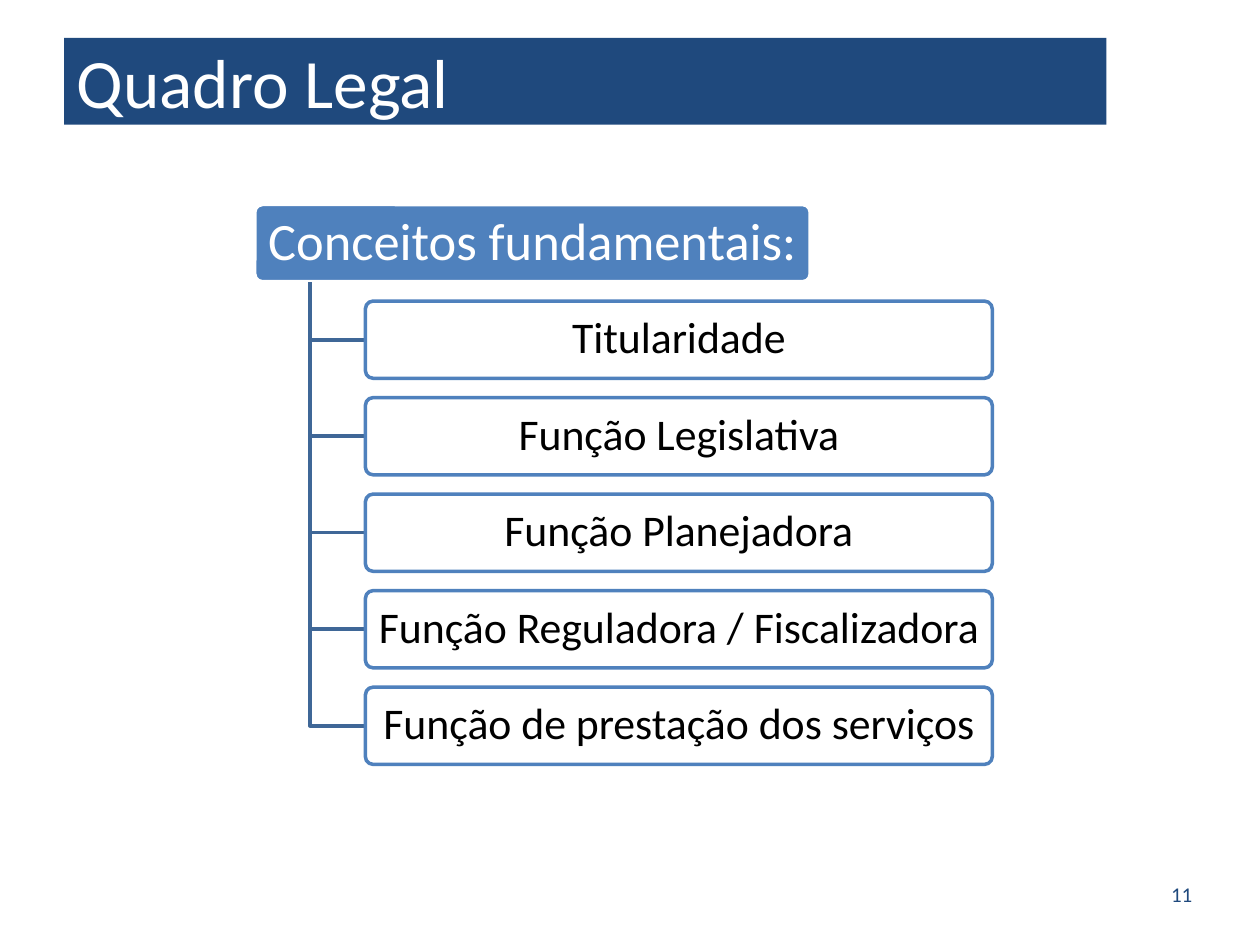
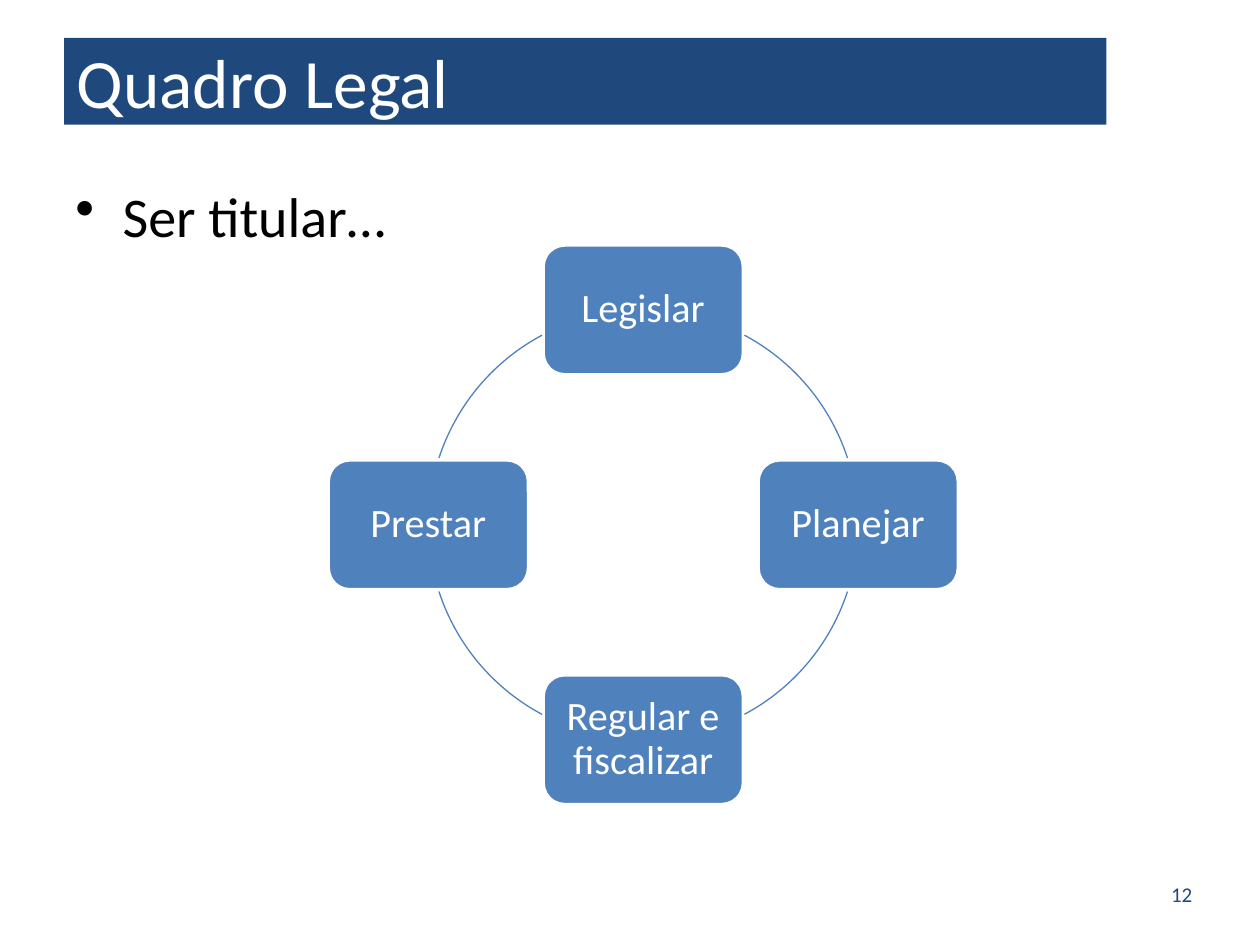
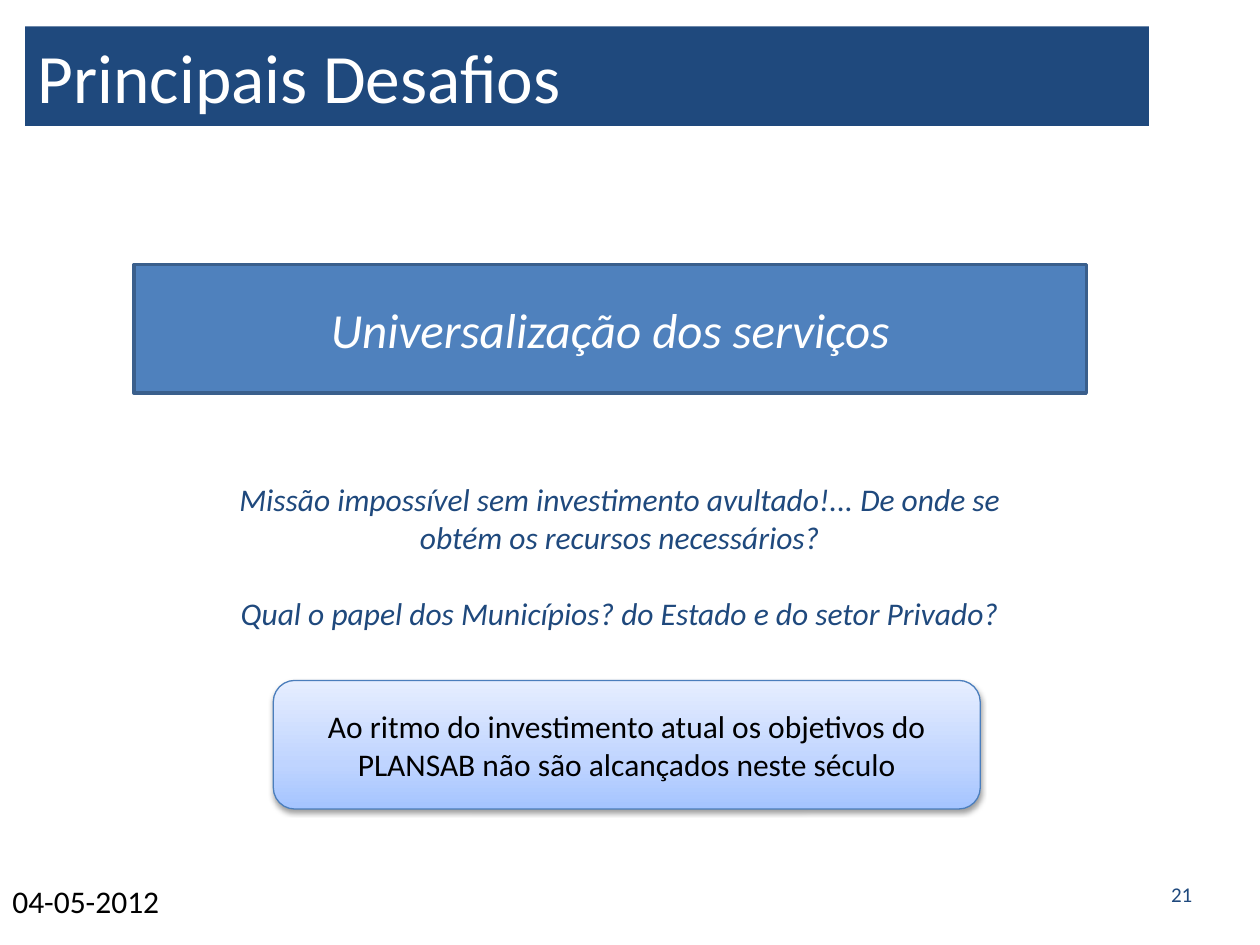
import copy

import lxml.etree
import pptx
import pptx.dml.color
import pptx.enum.shapes
import pptx.enum.text
import pptx.oxml.ns
import pptx.util

Pt = pptx.util.Pt
RGB = pptx.dml.color.RGBColor
ALIGN = pptx.enum.text.PP_ALIGN
ANCHOR = pptx.enum.text.MSO_ANCHOR
SHAPE = pptx.enum.shapes.MSO_SHAPE
qn = pptx.oxml.ns.qn

NAVY = RGB(0x1F, 0x49, 0x7D)
BLUE = RGB(0x4F, 0x81, 0xBD)
BRANCH_BLUE = RGB(0x3F, 0x67, 0x97)
FRAME_BLUE = RGB(0x3A, 0x5F, 0x8C)
EDGE_BLUE = RGB(0x4B, 0x7E, 0xBC)
WHITE = RGB(0xFF, 0xFF, 0xFF)
BLACK = RGB(0, 0, 0)
GRADIENT = (
    (0, RGB(0xA4, 0xC4, 0xFF)),
    (0.35, RGB(0xBF, 0xD4, 0xFF)),
    (1, RGB(0xE6, 0xEE, 0xFF)),
)

FONT = "Calibri"
LEGAL_BAND = (36.7, 21.6, 595.5, 49.7)
CHALLENGE_BAND = (14.4, 15.1, 642.2, 56.9)


def points(*lengths):
    """Convert numbers in points to lengths."""
    return [Pt(length) for length in lengths]


def write_text(frame, text, size=18, color=BLACK, italic=False, align=ALIGN.LEFT,
               anchor=ANCHOR.MIDDLE, insets=(7.2, 3.6), line_spacing=None, gap=0):
    """Fill a text frame, one paragraph per line of text."""
    frame.word_wrap = True
    frame.auto_size = pptx.enum.text.MSO_AUTO_SIZE.NONE
    frame.vertical_anchor = anchor
    frame.margin_left = frame.margin_right = Pt(insets[0])
    frame.margin_top = frame.margin_bottom = Pt(insets[1])
    for index, line in enumerate(text.split("\n")):
        paragraph = frame.add_paragraph() if index else frame.paragraphs[0]
        paragraph.alignment = align
        paragraph.line_spacing = line_spacing
        if index:
            paragraph.space_before = Pt(gap)
        run = paragraph.add_run()
        run.text = line
        run.font.name = FONT
        run.font.size = Pt(size)
        run.font.italic = italic
        run.font.color.rgb = color


def add_label(slide, box, text, **text_format):
    """Add free-standing text."""
    label = slide.shapes.add_textbox(*points(*box))
    write_text(label.text_frame, text, **text_format)
    return label


def add_block(slide, kind, box, fill, line, text, line_width=2, corner=None, **text_format):
    """Add a filled shape with centred text."""
    block = slide.shapes.add_shape(kind, *points(*box))
    block.shadow.inherit = False
    if corner is not None:
        block.adjustments[0] = corner
    if fill is not None:
        block.fill.solid()
        block.fill.fore_color.rgb = fill
    block.line.color.rgb = line
    block.line.width = Pt(line_width)
    write_text(block.text_frame, text, align=ALIGN.CENTER, **text_format)
    return block


def add_branch(slide, trunk_x, top, end_x, end_y):
    """Draw an elbow line down the trunk and across to a box."""
    builder = slide.shapes.build_freeform(Pt(trunk_x), Pt(top))
    builder.add_line_segments([points(trunk_x, end_y), points(end_x, end_y)], close=False)
    branch = builder.convert_to_shape()
    branch.shadow.inherit = False
    branch.fill.background()
    branch.line.color.rgb = BRANCH_BLUE
    branch.line.width = Pt(2)


def add_arc(slide, center_x, center_y, radius, start, end):
    """Draw an arc of a circle between two clockwise angles in degrees."""
    arc = slide.shapes.add_shape(
        SHAPE.ARC, *points(center_x - radius, center_y - radius, 2 * radius, 2 * radius))
    arc.shadow.inherit = False
    arc.adjustments[0] = start * 0.6
    arc.adjustments[1] = end * 0.6
    arc.fill.background()
    arc.line.color.rgb = BLUE
    arc.line.width = Pt(0.75)


def add_bullet(paragraph, indent):
    """Give a paragraph a hanging bullet."""
    properties = paragraph._p.get_or_add_pPr()
    properties.set("marL", str(Pt(indent)))
    properties.set("indent", str(-Pt(indent)))
    lxml.etree.SubElement(properties, qn("a:buChar"), char="•")


def apply_gradient(shape):
    """Fill a shape with the pale gradient, darkest at the bottom."""
    shape.fill.gradient()
    shape.fill.gradient_angle = 90
    stop_list = shape._element.spPr.find(".//" + qn("a:gsLst"))
    stop_list.insert(1, copy.deepcopy(stop_list[0]))
    for stop, (position, color) in zip(shape.fill.gradient_stops, GRADIENT):
        stop.position = position
        stop.color.rgb = color


def apply_shadow(shape):
    """Give a shape a soft shadow below it."""
    effects = shape._element.spPr.find(qn("a:effectLst"))
    shadow = lxml.etree.SubElement(
        effects, qn("a:outerShdw"), blurRad=str(Pt(3.1)), dist=str(Pt(1.6)),
        dir="5400000", rotWithShape="0")
    color = lxml.etree.SubElement(shadow, qn("a:srgbClr"), val="000000")
    lxml.etree.SubElement(color, qn("a:alpha"), val="38000")


def add_titled_slide(deck, title, band, number):
    """Add a slide with its title band and page number."""
    slide = deck.slides.add_slide(deck.slide_layouts[5])
    heading = slide.shapes.title
    heading.left, heading.top, heading.width, heading.height = points(*band)
    heading.fill.solid()
    heading.fill.fore_color.rgb = NAVY
    write_text(heading.text_frame, title, size=39.6, color=WHITE)
    add_label(slide, (520.6, 496.8, 167.8, 28.8), str(number),
              size=12, color=NAVY, align=ALIGN.RIGHT)
    return slide


def add_concepts_slide(deck):
    """Show the fundamental concepts as a branching list."""
    slide = add_titled_slide(deck, "Quadro Legal", LEGAL_BAND, 11)
    add_block(slide, SHAPE.ROUNDED_RECTANGLE, (145.6, 116.9, 317.4, 44.1), BLUE, WHITE,
              "Conceitos fundamentais:", corner=0.1, size=30, color=WHITE,
              insets=(4.3, 2.9), line_spacing=0.9)
    concepts = ("Titularidade", "Função Legislativa", "Função Planejadora",
                "Função Reguladora / Fiscalizadora", "Função de prestação dos serviços")
    left, first_top, width, height, pitch = 208.8, 172.1, 358.2, 44.1, 55.15
    for index, concept in enumerate(concepts):
        top = first_top + index * pitch
        add_branch(slide, 177.1, 161.3, left, top + height / 2)
        add_block(slide, SHAPE.ROUNDED_RECTANGLE, (left, top, width, height), WHITE, BLUE,
                  concept, corner=0.1, size=25, insets=(3.6, 2.2), line_spacing=0.9)


def add_cycle_slide(deck):
    """Show the duties of the holder as a cycle."""
    slide = add_titled_slide(deck, "Quadro Legal", LEGAL_BAND, 12)
    lead = add_label(slide, (36, 100.1, 648, 317.5), "Ser titular…",
                     size=32, anchor=ANCHOR.TOP)
    add_bullet(lead.text_frame.paragraphs[0], 27)
    center_x, center_y, radius, width, height = 367.6, 299.9, 122.8, 114.5, 74.2
    duties = (("Legislar", 0, -1), ("Planejar", 1, 0),
              ("Regular e fiscalizar", 0, 1), ("Prestar", -1, 0))
    for duty, across, down in duties:
        box = (center_x + across * radius - width / 2,
               center_y + down * radius - height / 2, width, height)
        add_block(slide, SHAPE.ROUNDED_RECTANGLE, box, BLUE, WHITE, duty,
                  size=23, color=WHITE, insets=(7.2, 7.2), line_spacing=0.9)
    for middle in (40, 140, 220, 320):
        add_arc(slide, center_x, center_y, radius, middle - 21.9, middle + 21.9)


def add_challenges_slide(deck):
    """Show the main challenge, its questions and the conclusion."""
    slide = add_titled_slide(deck, "Principais Desafios", CHALLENGE_BAND, 21)
    add_label(slide, (0, 500.4, 167.8, 28.8), "04-05-2012", anchor=ANCHOR.TOP)
    add_block(slide, SHAPE.RECTANGLE, (76.5, 151.2, 544.3, 73.5), BLUE, FRAME_BLUE,
              "Universalização dos serviços", size=28, color=WHITE, italic=True)
    questions = ("Missão impossível sem investimento avultado!... De onde se obtém "
                 "os recursos necessários?\n"
                 "Qual o papel dos Municípios? do Estado e do setor Privado?")
    add_label(slide, (127.4, 270.7, 453.6, 94.3), questions, color=NAVY, italic=True,
              align=ALIGN.CENTER, anchor=ANCHOR.TOP, gap=22)
    conclusion = add_block(
        slide, SHAPE.ROUNDED_RECTANGLE, (156.2, 388.8, 404, 73.5), None, EDGE_BLUE,
        "Ao ritmo do investimento atual os objetivos do PLANSAB não são alcançados "
        "neste século", line_width=0.75)
    apply_gradient(conclusion)
    apply_shadow(conclusion)


def main():
    """Build and save the presentation."""
    deck = pptx.Presentation()
    deck.slide_width, deck.slide_height = points(720, 540)
    add_concepts_slide(deck)
    add_cycle_slide(deck)
    add_challenges_slide(deck)
    deck.save("out.pptx")


if __name__ == "__main__":
    main()
